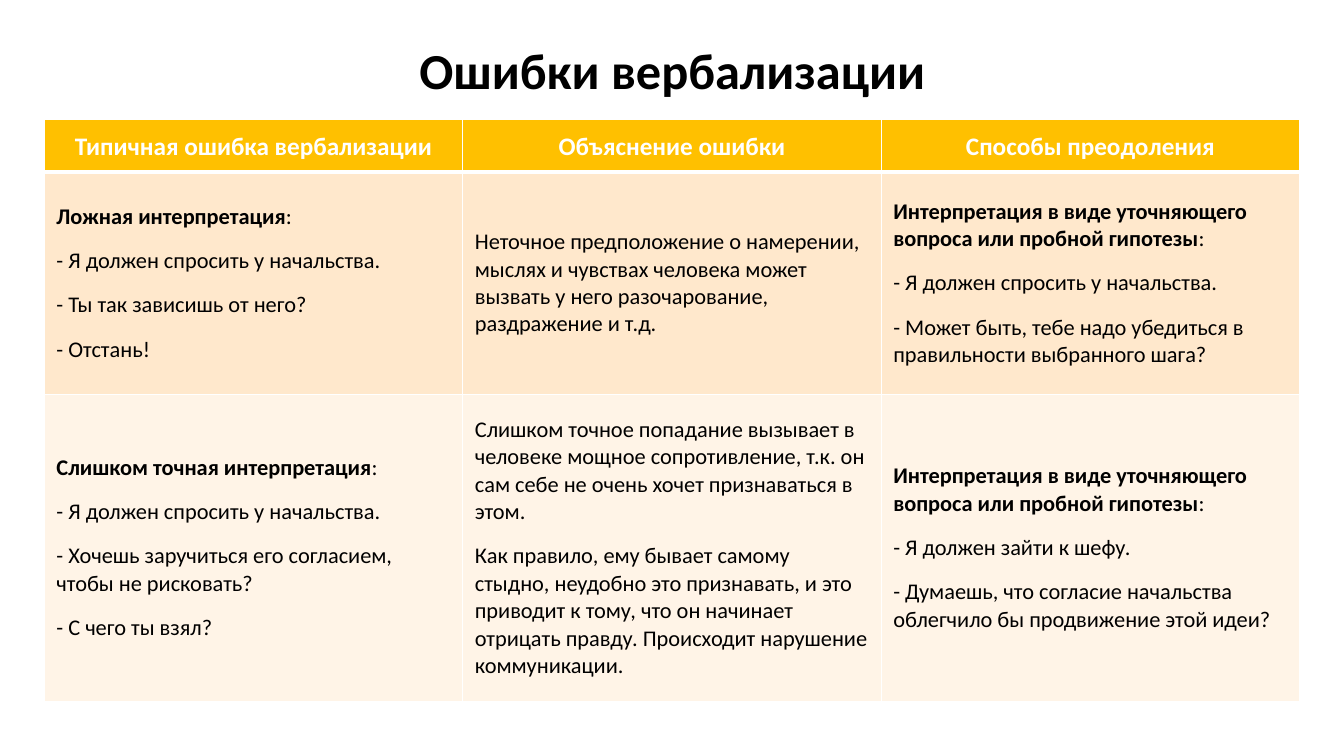
from lxml import etree
from pptx import Presentation
from pptx import util as u
from pptx.dml.color import RGBColor
from pptx.enum import text as t
from pptx.oxml import ns

PX = 9144  # 100 px to the inch
HEADS = ["Типичная ошибка вербализации", "Объяснение ошибки", "Способы преодоления"]
GUESS = "Интерпретация в виде уточняющего вопроса или пробной гипотезы"
ASK = "- Я должен спросить у начальства."
# Each cell: bold lead (or None) and its paragraphs
ROWS = [
    [("Ложная интерпретация", [ASK, "- Ты так зависишь от него?", "- Отстань!"]),
     (None, ["Неточное предположение о намерении, мыслях и чувствах человека может "
             "вызвать у него разочарование, раздражение и т.д."]),
     (GUESS, [ASK, "- Может быть, тебе надо убедиться в правильности выбранного шага?"])],
    [("Слишком точная интерпретация",
      [ASK, "- Хочешь заручиться его согласием, чтобы не рисковать?", "- С чего ты взял?"]),
     (None, ["Слишком точное попадание вызывает в человеке мощное сопротивление, т.к. он "
             "сам себе не очень хочет признаваться в этом.",
             "Как правило, ему бывает самому стыдно, неудобно это признавать, и это "
             "приводит к тому, что он начинает отрицать правду. Происходит нарушение "
             "коммуникации."]),
     (GUESS, ["- Я должен зайти к шефу.",
              "- Думаешь, что согласие начальства облегчило бы продвижение этой идеи?"])],
]


def px(n):
    return u.Emu(n * PX)


def color(code):
    return RGBColor.from_string(code)


def write(para, text, size=16, hue="000000", bold=False):
    run = para.add_run()
    run.text = text
    font = run.font
    font.name, font.size, font.bold = "Calibri", u.Pt(size), bold
    font.color.rgb = color(hue)


def edge(cell, sides):
    """Draw white borders; sides maps a side letter to its width in points."""
    props = cell._tc.get_or_add_tcPr()
    for i, side in enumerate("LRTB"):
        line = etree.Element(ns.qn("a:ln" + side), w=str(u.Pt(sides.get(side, 1))))
        fill = etree.SubElement(line, ns.qn("a:solidFill"))
        etree.SubElement(fill, ns.qn("a:srgbClr"), val="FFFFFF")
        props.insert(i, line)


def dress(cell, hue, pad, sides):
    cell.fill.solid()
    cell.fill.fore_color.rgb = color(hue)
    cell.vertical_anchor = t.MSO_ANCHOR.MIDDLE
    cell.margin_left = cell.margin_right = px(pad)
    cell.margin_top = cell.margin_bottom = 0
    edge(cell, sides)


def fill_head(cell, text):
    dress(cell, "FFC000", 4, {"B": 3})
    para = cell.text_frame.paragraphs[0]
    para.alignment = t.PP_ALIGN.CENTER
    para.line_spacing = 1.07
    write(para, text, size=18, hue="FFFFFF", bold=True)


def fill_body(cell, lead, lines, hue, sides):
    dress(cell, hue, 12, sides)
    frame = cell.text_frame
    for i, line in enumerate([lead] * bool(lead) + lines):
        para = frame.add_paragraph() if i else frame.paragraphs[0]
        para.alignment = t.PP_ALIGN.LEFT
        para.space_before = u.Pt(12 if i else 0)
        first = bool(lead) and i == 0
        write(para, line, bold=first)
        if first:
            write(para, ":")


def add_title(slide, x, y, w, h):
    shape = slide.shapes.title
    shape.left, shape.top, shape.width, shape.height = map(px, (x, y, w, h))
    frame = shape.text_frame
    frame.word_wrap = True
    frame.vertical_anchor = t.MSO_ANCHOR.MIDDLE
    para = frame.paragraphs[0]
    para.alignment = t.PP_ALIGN.CENTER
    para.line_spacing = 0.9
    write(para, "Ошибки вербализации", size=36, bold=True)


def add_grid(slide, x, y, w, highs):
    count = len(HEADS)
    grid = slide.shapes.add_table(len(highs), count, *map(px, (x, y, w, sum(highs)))).table
    for col in grid.columns:
        col.width = px(w // count)
    for row, high in zip(grid.rows, highs):
        row.height = px(high)
    for c, head in enumerate(HEADS):
        fill_head(grid.cell(0, c), head)
    for r, (row, hue) in enumerate(zip(ROWS, ("FFE8CC", "FFF4E7")), 1):
        for c, (lead, lines) in enumerate(row):
            fill_body(grid.cell(r, c), lead, lines, hue, {"T": 3 if r == 1 else 1})


def main():
    deck = Presentation()
    deck.slide_width, deck.slide_height = px(1333), px(750)
    slide = deck.slides.add_slide(deck.slide_layouts[5])
    add_title(slide, 92, 43, 1150, 60)
    add_grid(slide, 44, 118, 1245, [53, 220, 305])
    deck.save("out.pptx")


if __name__ == "__main__":
    main()
